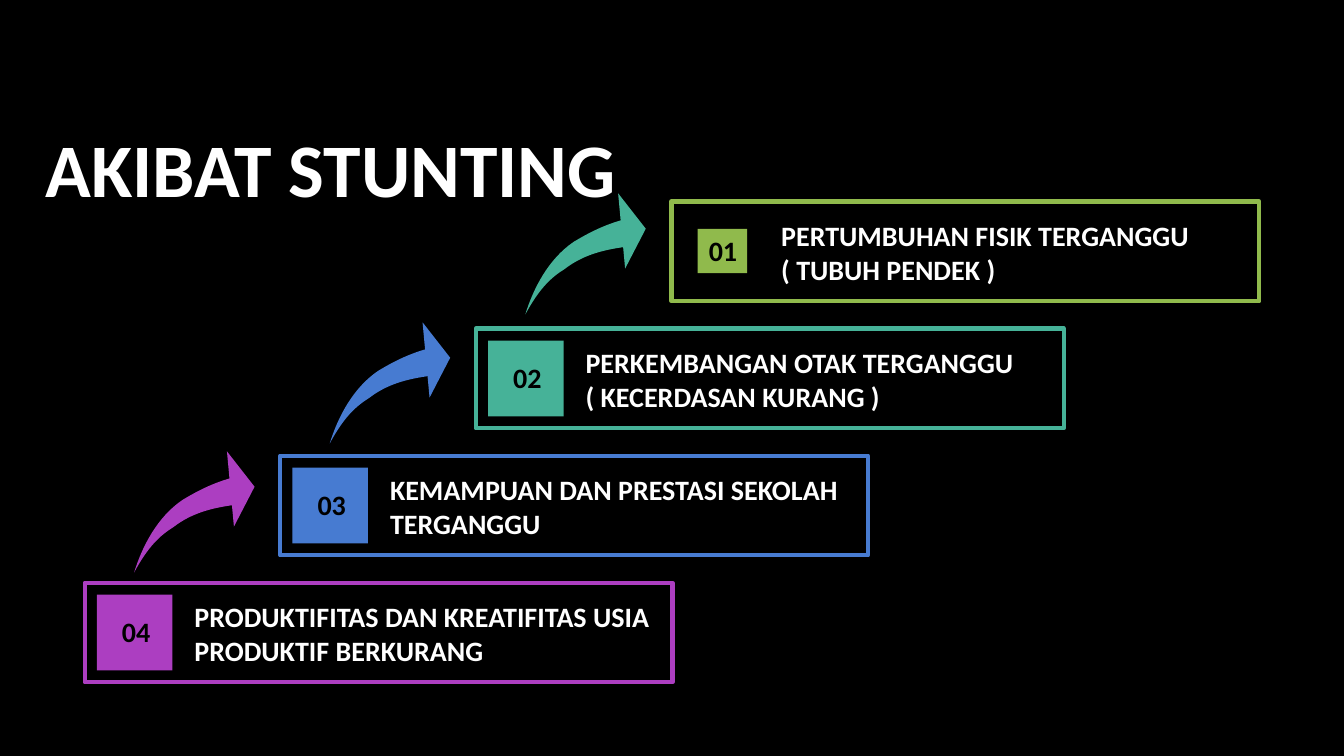
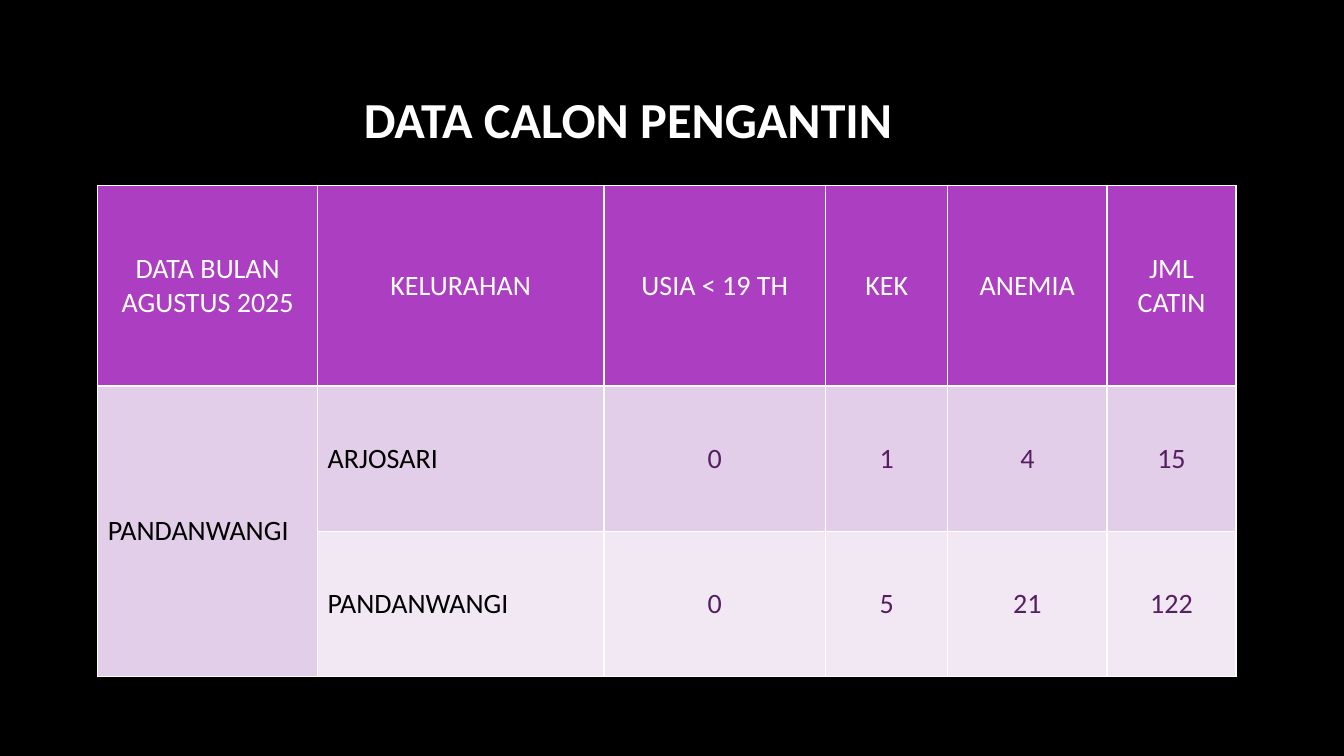
from pptx import Presentation
from pptx import util as u
from pptx.dml.color import RGBColor
from pptx.enum import shapes, text
from pptx.oxml import parse_xml
from pptx.oxml.ns import nsdecls, qn

FONT = "Calibri"
BLACK = RGBColor(0x00, 0x00, 0x00)
WHITE = RGBColor(0xFF, 0xFF, 0xFF)
GREEN = RGBColor(0x90, 0xBA, 0x4C)
TEAL = RGBColor(0x46, 0xB2, 0x98)
BLUE = RGBColor(0x47, 0x7B, 0xD1)
PURPLE = RGBColor(0xAC, 0x3E, 0xC1)
PLUM = RGBColor(0x56, 0x1F, 0x60)
LILAC = RGBColor(0xE3, 0xCE, 0xE9)
PALE = RGBColor(0xF1, 0xE8, 0xF4)

LEFT, CENTER, RIGHT = text.PP_ALIGN.LEFT, text.PP_ALIGN.CENTER, text.PP_ALIGN.RIGHT
MIDDLE = text.MSO_ANCHOR.MIDDLE
RECT, TIP = shapes.MSO_SHAPE.RECTANGLE, shapes.MSO_SHAPE.ISOSCELES_TRIANGLE

STEPS = [
    ("04", "PRODUKTIFITAS DAN KREATIFITAS USIA PRODUKTIF BERKURANG", PURPLE),
    ("03", "KEMAMPUAN DAN PRESTASI SEKOLAH TERGANGGU", BLUE),
    ("02", "PERKEMBANGAN OTAK TERGANGGU ( KECERDASAN KURANG )", TEAL),
    ("01", "PERTUMBUHAN FISIK TERGANGGU ( TUBUH PENDEK )", GREEN),
]
TAIL = (0.97, 0)
CURVES = [
    ((0.75, 0.06), (0.58, 0.16), (0.48, 0.22)),
    ((0.23, 0.39), (0.08, 0.68), (0, 0.94)),
    ((0.14, 0.68), (0.26, 0.57), (0.39, 0.49)),
    ((0.57, 0.35), (0.77, 0.30), (0.99, 0.27)),
]
COLS = [2.18, 2.84, 2.2, 1.21, 1.58, 1.28]
ROWS = [1.99, 1.44, 1.44]
DATA = [
    ["DATA BULAN AGUSTUS 2025", "KELURAHAN", "USIA < 19 TH", "KEK", "ANEMIA", "JML CATIN"],
    ["PANDANWANGI", "ARJOSARI", "0", "1", "4", "15"],
    ["", "PANDANWANGI", "0", "5", "21", "122"],
]


def inches(*sizes):
    return [u.Inches(size) for size in sizes]


def write(frame, words, color, size=20, bold=True, align=LEFT):
    frame.text = words
    para = frame.paragraphs[0]
    para.alignment = align
    font = para.font
    font.name, font.size, font.bold = FONT, u.Pt(size), bold
    font.color.rgb = color


def add_slide(prs, title, box, size, align):
    slide = prs.slides.add_slide(prs.slide_layouts[5])
    head = slide.shapes.title
    head.left, head.top, head.width, head.height = inches(*box)
    head.text_frame.vertical_anchor = MIDDLE
    write(head.text_frame, title, WHITE, size, align=align)
    return slide


def paint(shape, color):
    shape.fill.solid()
    shape.fill.fore_color.rgb = color
    shape.line.fill.background()


def add_solid(group, kind, box, color):
    shape = group.shapes.add_shape(kind, *inches(*box))
    shape.shadow.inherit = False
    paint(shape, color)
    return shape


def add_frame(group, x, y, color):
    frame = group.shapes.add_shape(RECT, *inches(x, y, 5.83, 0.99))
    frame.shadow.inherit = False
    frame.fill.background()
    frame.line.color.rgb = color
    frame.line.width = u.Pt(3)


def add_label(group, box, words, color, wrap, align):
    label = group.shapes.add_textbox(*inches(*box))
    frame = label.text_frame
    frame.word_wrap = wrap
    frame.auto_size = text.MSO_AUTO_SIZE.SHAPE_TO_FIT_TEXT
    write(frame, words, color, align=align)
    return label


def add_step(slide, x, y, number, words, color, small):
    group = slide.shapes.add_group_shape()
    add_frame(group, x, y, color)
    if not small:
        add_solid(group, RECT, (x + 0.12, y + 0.12, 0.75, 0.75), color)
    add_label(group, (x + 0.99, y + 0.12, 4.74, 0.77), words, WHITE, True, LEFT)
    label = add_label(group, (x + 0.26, y + 0.27, 0.49, 0.44), number, BLACK, False, RIGHT)
    if small:
        paint(label, color)


def bend(shape, curves):
    for line, curve in zip(shape._element.findall(".//" + qn("a:lnTo")), curves):
        knots = "".join(
            f'<a:pt x="{u.Inches(a)}" y="{u.Inches(b)}"/>' for a, b in curve)
        line.getparent().replace(line, parse_xml(
            f'<a:cubicBezTo {nsdecls("a")}>{knots}</a:cubicBezTo>'))


def add_arrow(slide, x, y, color):
    group = slide.shapes.add_group_shape()
    pen = group.shapes.build_freeform(*inches(x + TAIL[0], y + TAIL[1]))
    pen.add_line_segments([inches(x + c[-1][0], y + c[-1][1]) for c in CURVES])
    tail = pen.convert_to_shape()
    tail.shadow.inherit = False
    paint(tail, color)
    bend(tail, CURVES)
    tip = add_solid(group, TIP, (x + 0.7, y - 0.02, 0.75, 0.24), color)
    tip.rotation = 84.7


def set_edges(cell):
    props = cell._tc.get_or_add_tcPr()
    for i, side in enumerate(("lnL", "lnR", "lnT", "lnB")):
        props.insert(i, parse_xml(
            f'<a:{side} {nsdecls("a")} w="{u.Pt(1)}"><a:solidFill>'
            f'<a:srgbClr val="{WHITE}"/></a:solidFill></a:{side}>'))


def add_grid(slide, x, y):
    table = slide.shapes.add_table(
        len(ROWS), len(COLS), *inches(x, y, sum(COLS), sum(ROWS))).table
    for col, width in zip(table.columns, COLS):
        col.width = u.Inches(width)
    for row, height in zip(table.rows, ROWS):
        row.height = u.Inches(height)
    for r, fill in enumerate((PURPLE, LILAC, PALE)):
        for c, words in enumerate(DATA[r]):
            cell = table.cell(r, c)
            cell.fill.solid()
            cell.fill.fore_color.rgb = fill
            cell.vertical_anchor = MIDDLE
            name = r > 0 and c < 2
            color = WHITE if r == 0 else BLACK if name else PLUM
            write(cell.text_frame, words, color, bold=False,
                  align=LEFT if name else CENTER)
            set_edges(cell)
    table.cell(1, 0).merge(table.cell(2, 0))


def add_impact(prs):
    slide = add_slide(prs, "AKIBAT STUNTING", (0.35, 0.86, 11.08, 1.59), 54, LEFT)
    last = len(STEPS) - 1
    for i, (number, words, color) in enumerate(STEPS):
        add_step(slide, 0.84 + 1.94 * i, 5.78 - 1.26 * i, number, words, color, i == last)
        if i < last:
            add_arrow(slide, 1.33 + 1.94 * i, 4.74 - 1.28 * i, color)


def add_data(prs):
    slide = add_slide(prs, "DATA CALON PENGANTIN", (0.69, 0.67, 11.08, 1.01), 36, CENTER)
    add_grid(slide, 0.97, 1.84)


def main():
    prs = Presentation()
    prs.slide_width, prs.slide_height = inches(13.33, 7.5)
    back = prs.slide_master.background.fill
    back.solid()
    back.fore_color.rgb = BLACK
    add_impact(prs)
    add_data(prs)
    prs.save("out.pptx")


if __name__ == "__main__":
    main()
